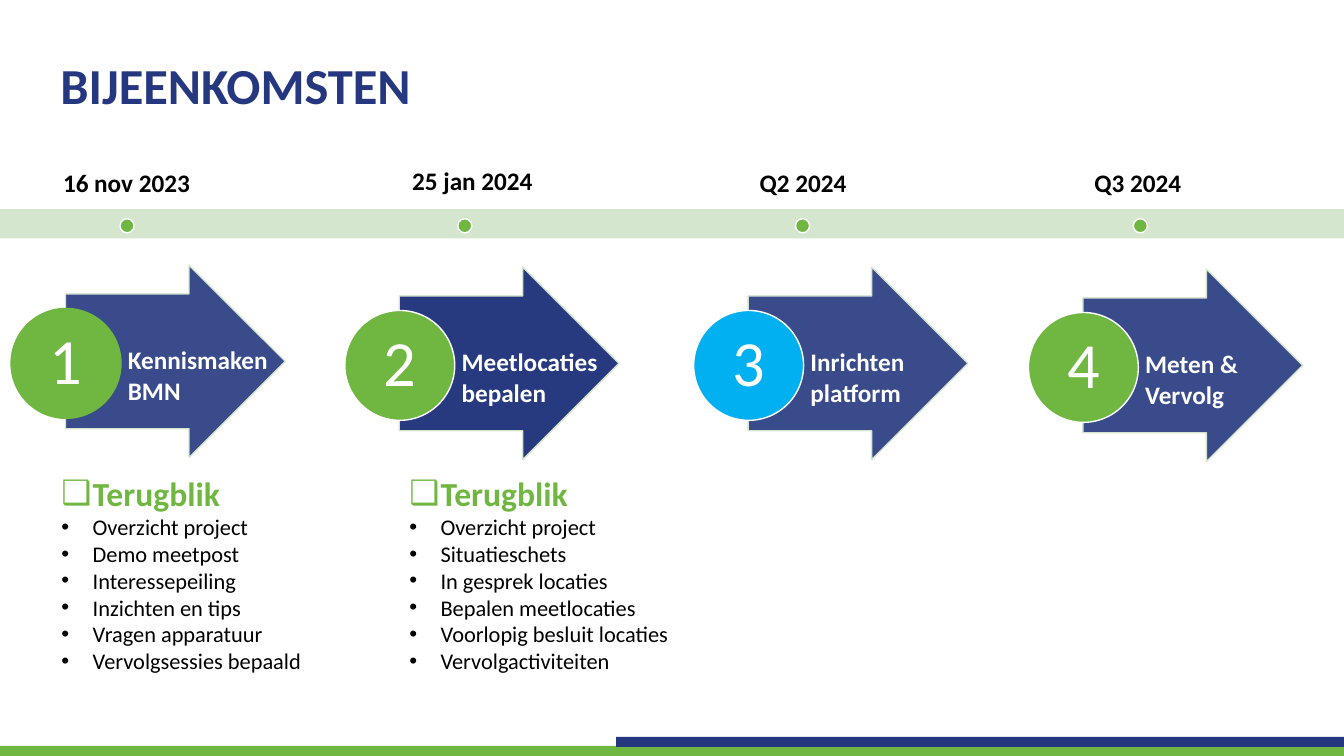
"""Build the BIJEENKOMSTEN slide: a timeline of four numbered meetings."""
from lxml import etree
from pptx import Presentation
from pptx.dml.color import RGBColor
from pptx.enum.shapes import MSO_SHAPE
from pptx.enum.text import MSO_ANCHOR, MSO_AUTO_SIZE, PP_ALIGN
from pptx.oxml.ns import qn
from pptx.util import Inches, Pt

RECTANGLE, OVAL = MSO_SHAPE.RECTANGLE, MSO_SHAPE.OVAL
RIGHT_ARROW, NOTCHED_ARROW = MSO_SHAPE.RIGHT_ARROW, MSO_SHAPE.NOTCHED_RIGHT_ARROW
LEFT, CENTER = PP_ALIGN.LEFT, PP_ALIGN.CENTER
TOP, MIDDLE, BOTTOM = MSO_ANCHOR.TOP, MSO_ANCHOR.MIDDLE, MSO_ANCHOR.BOTTOM
NO_AUTOFIT = MSO_AUTO_SIZE.NONE

NAVY = RGBColor(0x25, 0x38, 0x7F)
GREEN = RGBColor(0x70, 0xB7, 0x41)
PALE_GREEN = RGBColor(0xD5, 0xE6, 0xCF)
SKY = RGBColor(0x00, 0xB0, 0xF0)
WHITE = RGBColor(0xFF, 0xFF, 0xFF)
BLACK = RGBColor(0x00, 0x00, 0x00)


def write(holder, lines, size=18, color=BLACK, bold=False, align=LEFT, anchor=TOP,
          spacing=1.0, margins=(0, 0), bullet=None):
    frame = holder.text_frame
    frame.word_wrap = True
    frame.auto_size = NO_AUTOFIT
    frame.vertical_anchor = anchor
    frame.margin_left = frame.margin_right = Inches(margins[0])
    frame.margin_top = frame.margin_bottom = Inches(margins[1])
    for line in lines:
        paragraph = frame.add_paragraph() if frame.text else frame.paragraphs[0]
        paragraph.alignment = align
        paragraph.line_spacing = spacing
        paragraph.space_before = paragraph.space_after = Pt(0)
        if bullet:
            properties = paragraph._p.get_or_add_pPr()
            properties.set("marL", str(Inches(0.31)))
            properties.set("indent", str(-Inches(0.31)))
            etree.SubElement(properties, qn("a:buChar")).set("char", bullet)
        run = paragraph.add_run()
        run.text = line
        run.font.name = "Calibri"
        run.font.size = Pt(size)
        run.font.bold = bold
        run.font.color.rgb = color


def draw(kind, left, top, width, height, fill, line=None, opacity=100):
    shape = slide.shapes.add_shape(kind, Inches(left), Inches(top), Inches(width), Inches(height))
    shape.shadow.inherit = False
    shape.fill.solid()
    shape.fill.fore_color.rgb = fill
    if line is None:
        shape.line.fill.background()
    else:
        shape.line.color.rgb = line
        shape.line.width = Pt(1)
    if opacity < 100:
        fill_color = shape._element.spPr.find(qn("a:solidFill"))[0]
        etree.SubElement(fill_color, qn("a:alpha")).set("val", str(opacity * 1000))
    return shape


presentation = Presentation()
presentation.slide_width, presentation.slide_height = Inches(13.33), Inches(7.5)
slide = presentation.slides.add_slide(presentation.slide_layouts[3])

draw(RECTANGLE, 0, 7.4, 13.33, 0.1, GREEN)
draw(RECTANGLE, 6.11, 7.31, 7.22, 0.1, NAVY)

title = slide.shapes.title
title.left, title.top, title.width, title.height = map(Inches, (0.6, 0.62, 8.23, 0.51))
write(title, ["BIJEENKOMSTEN"], size=36, color=NAVY, bold=True, anchor=MIDDLE, spacing=0.9)

draw(NOTCHED_ARROW, -0.34, 1.93, 14.74, 0.58, PALE_GREEN)

meetings = [
    ("16 nov 2023", -0.34, 1.52, ["Kennismaken", "BMN"], 0.65, 2.63, 90, GREEN, GREEN),
    ("25 jan 2024", 3.09, 1.5, ["Meetlocaties", "bepalen"], 3.96, 2.65, 99, GREEN, WHITE),
    ("Q2 2024", 6.37, 1.52, ["Inrichten", "platform"], 7.42, 2.65, 90, SKY, WHITE),
    ("Q3 2024", 9.69, 1.52, ["Meten &", "Vervolg"], 10.74, 2.67, 90, GREEN, WHITE),
]
for index, (date, date_left, date_top, topic, left, top, opacity, fill, ring) in enumerate(meetings):
    date_label = slide.shapes.add_textbox(
        Inches(date_left), Inches(date_top), Inches(3.19), Inches(0.58))
    write(date_label, [date], bold=True, align=CENTER, anchor=BOTTOM, spacing=0.9,
          margins=(0.14, 0.14))
    draw(OVAL, 1.19 + 3.35 * index, 2.17, 0.14, 0.14, GREEN, WHITE)

    arrow = draw(RIGHT_ARROW, left, top, 2.18, 1.91, NAVY, PALE_GREEN, opacity)
    arrow.adjustments[0] = 0.7
    number = draw(OVAL, left - 0.54, top + 0.43, 1.09, 1.09, fill, ring)
    write(number, [str(index + 1)], size=46, color=WHITE, align=CENTER, anchor=MIDDLE, spacing=0.9)
    topic_label = slide.shapes.add_textbox(
        Inches(left + 0.52), Inches(top + 0.74), Inches(1.75), Inches(0.71))
    write(topic_label, topic, color=WHITE, bold=True, margins=(0.1, 0.05))

reviews = [
    (0.51, 2.7, ["Overzicht project", "Demo meetpost", "Interessepeiling",
                 "Inzichten en tips", "Vragen apparatuur", "Vervolgsessies bepaald"]),
    (3.96, 2.81, ["Overzicht project", "Situatieschets", "In gesprek locaties",
                  "Bepalen meetlocaties", "Voorlopig besluit locaties", "Vervolgactiviteiten"]),
]
for index, (left, width, items) in enumerate(reviews, 1):
    review = slide.placeholders[index]
    review.left, review.top, review.width, review.height = map(Inches, (left, 4.64, width, 2.39))
    write(review, ["Terugblik"], size=24, color=GREEN, bold=True, margins=(0.1, 0.05), bullet="❑")
    write(review, items, size=16, margins=(0.1, 0.05), bullet="•")

presentation.save("out.pptx")
